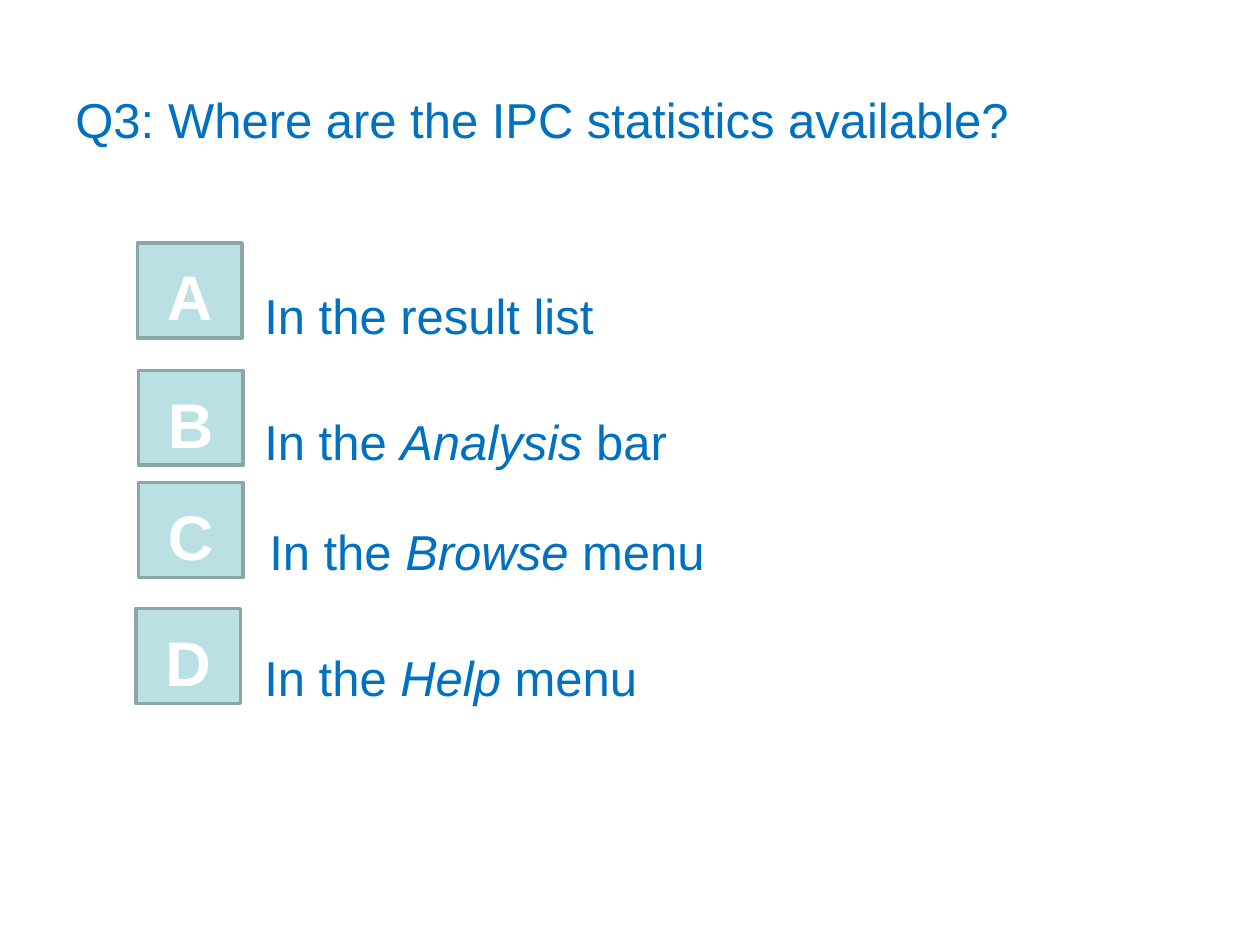
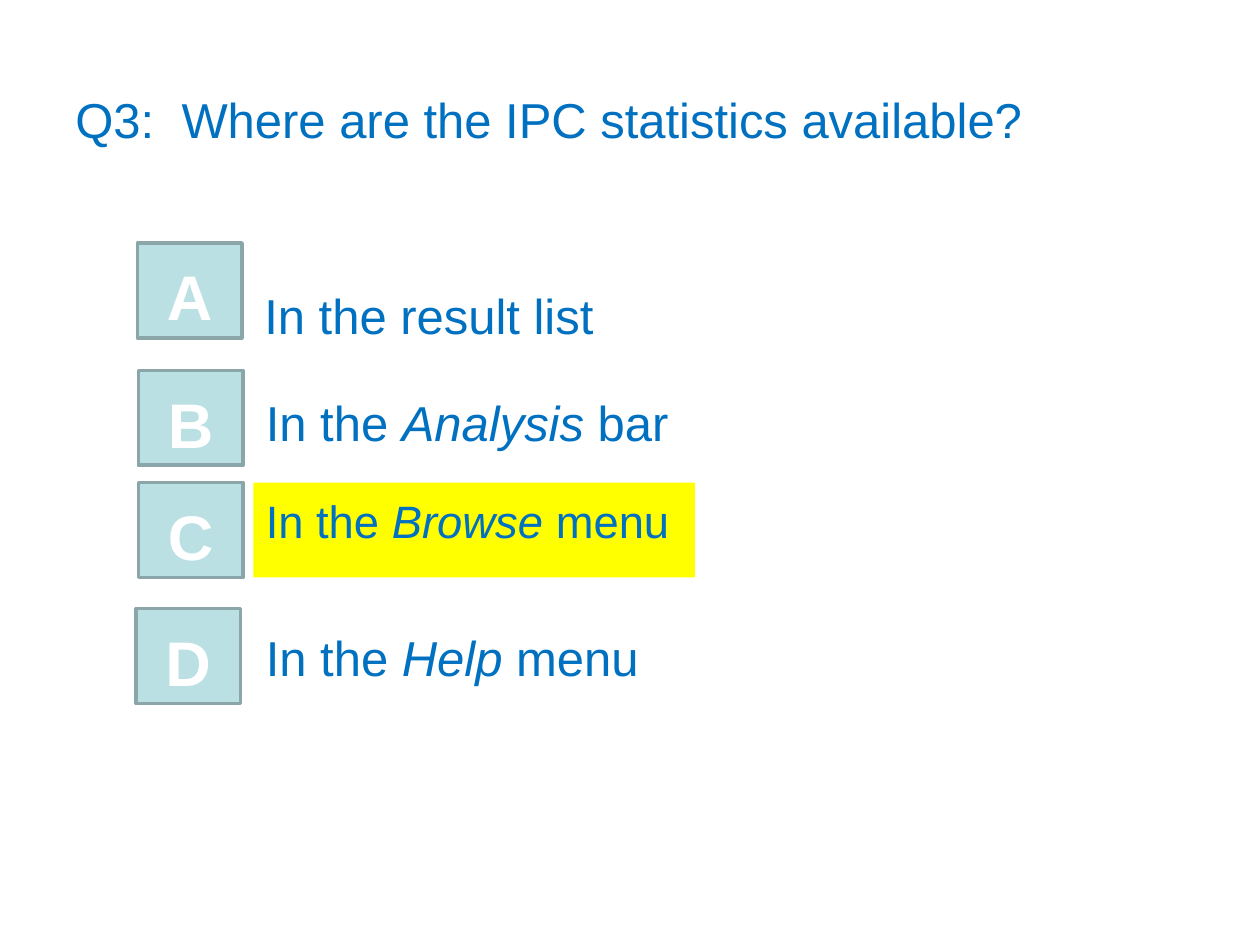
from lxml import etree
from pptx import Presentation
from pptx.dml.color import RGBColor
from pptx.enum.shapes import MSO_SHAPE
from pptx.enum.text import MSO_ANCHOR, PP_ALIGN
from pptx.oxml.ns import qn
from pptx.util import Cm, Pt

BUTTON = MSO_SHAPE.ACTION_BUTTON_CUSTOM
RECTANGLE = MSO_SHAPE.RECTANGLE
TOP, MIDDLE = MSO_ANCHOR.TOP, MSO_ANCHOR.MIDDLE
LEFT, CENTER = PP_ALIGN.LEFT, PP_ALIGN.CENTER

COLORS = {
    "text": "0070C0",
    "button": "BBE0E3",
    "button_line": "8AA6A8",
    "letter": "FFFFFF",
    "highlight": "FFFF00",
}
FONT = "Arial"
TEXT_SIZE = 28
HIGHLIGHT_SIZE = 25.9
BUTTON_WIDTH, BUTTON_HEIGHT = 2.11, 1.91
BUTTON_PLACES = {"A": (2.77, 4.9), "B": (2.79, 7.47), "C": (2.79, 9.73), "D": (2.74, 12.27)}

# Each answer: runs of (text, italic)
RESULT_LIST = [("In the result list", False)]
ANALYSIS_BAR = [("In the ", False), ("Analysis ", True), ("bar", False)]
BROWSE_MENU = [("In the ", False), ("Browse ", True), ("menu", False)]
HELP_MENU = [("In the ", False), ("Help", True), (" menu", False)]


class QuizDeck:
    def __init__(self):
        self.presentation = Presentation()
        self.presentation.slide_width = Cm(25.4)
        self.presentation.slide_height = Cm(19.05)
        self.slide = None

    def add_slide(self):
        self.slide = self.presentation.slides.add_slide(self.presentation.slide_layouts[6])

    def color(self, name):
        return RGBColor.from_string(COLORS[name])

    def add_text(self, shape, runs, size=TEXT_SIZE, color="text", bold=False,
                 align=LEFT, anchor=TOP, top_inset=0.21):
        frame = shape.text_frame
        frame.word_wrap = True
        frame.vertical_anchor = anchor
        frame.margin_top = Cm(top_inset)
        paragraph = frame.paragraphs[0]
        paragraph.alignment = align
        for text, italic in runs:
            run = paragraph.add_run()
            run.text = text
            run.font.name = FONT
            run.font.size = Pt(size)
            run.font.bold = bold
            run.font.italic = italic
            run.font.color.rgb = self.color(color)
        return paragraph

    def shape(self, kind, left, top, width, height, fill):
        shape = self.slide.shapes.add_shape(kind, Cm(left), Cm(top), Cm(width), Cm(height))
        shape.shadow.inherit = False
        shape.fill.solid()
        shape.fill.fore_color.rgb = self.color(fill)
        shape.line.fill.background()
        return shape

    def text_box(self, left, top, width, height):
        return self.slide.shapes.add_textbox(Cm(left), Cm(top), Cm(width), Cm(height))

    def title(self, number, question, tab_position):
        """Set the question after its number, at a tab stop given in cm."""
        box = self.text_box(1.27, 0.76, 22.86, 3.18)
        paragraph = self.add_text(box, [(f"{number}\t{question}", False)], anchor=MIDDLE)
        properties = paragraph._p.get_or_add_pPr()
        tabs = etree.SubElement(properties, qn("a:tabLst"))
        etree.SubElement(tabs, qn("a:tab"), pos=str(Cm(tab_position)), algn="l")

    def answer(self, runs, left, top, width, height=1.5):
        self.add_text(self.text_box(left, top, width, height), runs)

    def highlighted_answer(self, runs, left, top, width, height):
        box = self.shape(RECTANGLE, left, top, width, height, "highlight")
        self.add_text(box, runs, size=HIGHLIGHT_SIZE)

    def letter_buttons(self):
        for letter, (left, top) in BUTTON_PLACES.items():
            button = self.shape(BUTTON, left, top, BUTTON_WIDTH, BUTTON_HEIGHT, "button")
            button.line.color.rgb = self.color("button_line")
            button.line.width = Pt(2)
            self.add_text(button, [(letter, False)], size=36, color="letter", bold=True,
                          align=CENTER, anchor=MIDDLE, top_inset=0.33)


def main():
    deck = QuizDeck()
    question = "Where are the IPC statistics available?"

    deck.add_slide()
    deck.title("Q3:", question, 1.87)
    deck.answer(RESULT_LIST, 5.08, 5.54, 18.85)
    deck.answer(BROWSE_MENU, 5.18, 10.31, 18.75)
    deck.answer(ANALYSIS_BAR, 5.08, 8.08, 9.1)
    deck.answer(HELP_MENU, 5.08, 12.85, 13.54)
    deck.letter_buttons()

    deck.add_slide()
    deck.title("Q3:", question, 2.14)
    deck.answer(RESULT_LIST, 5.08, 5.54, 8.9)
    deck.answer(ANALYSIS_BAR, 5.11, 7.7, 8.9)
    deck.highlighted_answer(BROWSE_MENU, 5.11, 9.73, 8.9, 1.91)
    deck.letter_buttons()
    deck.answer(HELP_MENU, 5.11, 12.45, 8.9, 1.91)

    deck.presentation.save("out.pptx")


if __name__ == "__main__":
    main()
